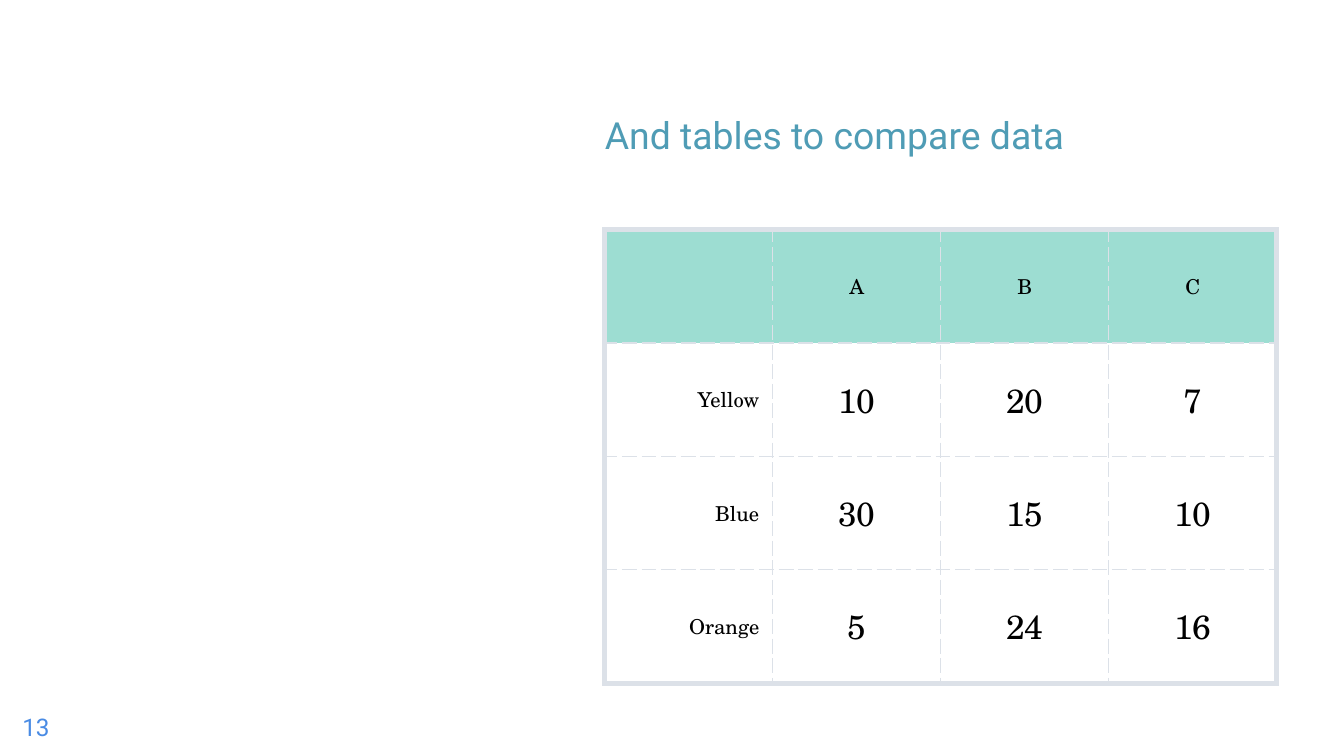
from dataclasses import dataclass

from lxml import etree
from pptx import Presentation
from pptx.dml.color import RGBColor
from pptx.enum.text import MSO_ANCHOR, MSO_AUTO_SIZE, PP_ALIGN
from pptx.oxml.ns import qn
from pptx.util import Pt

LEFT, CENTER, RIGHT = PP_ALIGN.LEFT, PP_ALIGN.CENTER, PP_ALIGN.RIGHT
MIDDLE, BOTTOM = MSO_ANCHOR.MIDDLE, MSO_ANCHOR.BOTTOM
NO_AUTOFIT = MSO_AUTO_SIZE.NONE

TEAL = RGBColor(0x4F, 0x9C, 0xB5)
MINT = RGBColor(0x9D, 0xDD, 0xD2)
GRAY = RGBColor(0xDC, 0xE1, 0xE8)
BLUE = RGBColor(0x49, 0x8B, 0xE4)
BLACK = RGBColor(0, 0, 0)

SANS = "Roboto"
SERIF = "TeX Gyre Schola"

COLUMN_WIDTH = Pt(90)
ROW_HEIGHT = Pt(60.75)
ROWS = [
    ["", "A", "B", "C"],
    ["Yellow", "10", "20", "7"],
    ["Blue", "30", "15", "10"],
    ["Orange", "5", "24", "16"],
]


@dataclass(frozen=True)
class TextStyle:
    font: str
    size: float
    color: RGBColor
    alignment: PP_ALIGN = LEFT


@dataclass(frozen=True)
class Border:
    width: float
    dash: str


TITLE = TextStyle(SANS, 20, TEAL)
NUMBER = TextStyle(SANS, 13, BLUE)
COLUMN_LABEL = TextStyle(SERIF, 11, BLACK, CENTER)
ROW_LABEL = TextStyle(SERIF, 11, BLACK, RIGHT)
VALUE = TextStyle(SERIF, 18, BLACK, CENTER)

OUTER = Border(3, "solid")
INNER = Border(0.75, "dash")


def write(paragraph, text: str, style: TextStyle) -> None:
    paragraph.alignment = style.alignment
    run = paragraph.add_run()
    run.text = text
    run.font.name = style.font
    run.font.size = Pt(style.size)
    run.font.color.rgb = style.color


def fill_text_shape(shape, text: str, style: TextStyle, anchor: MSO_ANCHOR) -> None:
    frame = shape.text_frame
    frame.margin_left = frame.margin_top = frame.margin_right = frame.margin_bottom = 0
    frame.word_wrap = True
    frame.auto_size = NO_AUTOFIT
    frame.vertical_anchor = anchor
    write(frame.paragraphs[0], text, style)


def add_border(cell, side: str, border: Border) -> None:
    properties = cell._tc.get_or_add_tcPr()
    line = etree.SubElement(properties, qn(f"a:ln{side}"), w=str(Pt(border.width)))
    fill = etree.SubElement(line, qn("a:solidFill"))
    etree.SubElement(fill, qn("a:srgbClr"), val=str(GRAY))
    etree.SubElement(line, qn("a:prstDash"), val=border.dash)


def format_cell(cell, row: int, column: int) -> None:
    outer_sides = {
        "L": column == 0,
        "R": column == len(ROWS[0]) - 1,
        "T": row == 0,
        "B": row == len(ROWS) - 1,
    }
    for side, is_outer in outer_sides.items():
        add_border(cell, side, OUTER if is_outer else INNER)
    if row == 0:
        cell.fill.solid()
        cell.fill.fore_color.rgb = MINT
    else:
        cell.fill.background()
    cell.vertical_anchor = MIDDLE
    cell.margin_left = cell.margin_right = Pt(7.2)
    cell.margin_top = cell.margin_bottom = Pt(5)
    style = COLUMN_LABEL if row == 0 else ROW_LABEL if column == 0 else VALUE
    if ROWS[row][column]:
        write(cell.text_frame.paragraphs[0], ROWS[row][column], style)


def add_data_table(slide) -> None:
    row_count, column_count = len(ROWS), len(ROWS[0])
    table = slide.shapes.add_table(
        row_count, column_count, Pt(324), Pt(123),
        COLUMN_WIDTH * column_count, ROW_HEIGHT * row_count,
    ).table
    table.first_row = False
    table.horz_banding = False
    for column in table.columns:
        column.width = COLUMN_WIDTH
    for row in table.rows:
        row.height = ROW_HEIGHT
    for row in range(row_count):
        for column in range(column_count):
            format_cell(table.cell(row, column), row, column)


def main() -> None:
    presentation = Presentation()
    presentation.slide_width = Pt(720)
    presentation.slide_height = Pt(405)
    slide = presentation.slides.add_slide(presentation.slide_layouts[5])

    title = slide.shapes.title
    title.left, title.top, title.width, title.height = Pt(324), Pt(16.5), Pt(360), Pt(67.75)
    fill_text_shape(title, "And tables to compare data", TITLE, BOTTOM)

    add_data_table(slide)

    number = slide.shapes.add_textbox(Pt(12), Pt(374), Pt(43), Pt(31))
    fill_text_shape(number, "13", NUMBER, MIDDLE)

    presentation.save("out.pptx")


if __name__ == "__main__":
    main()
